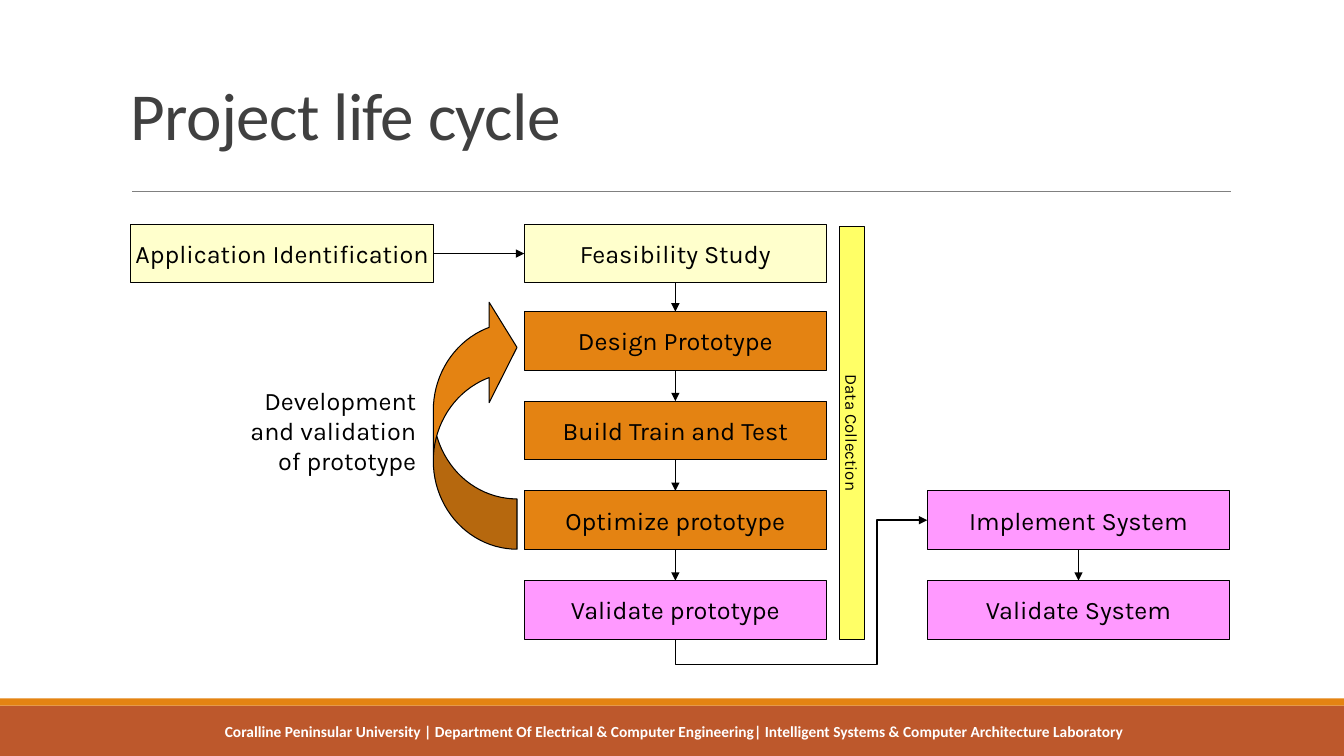
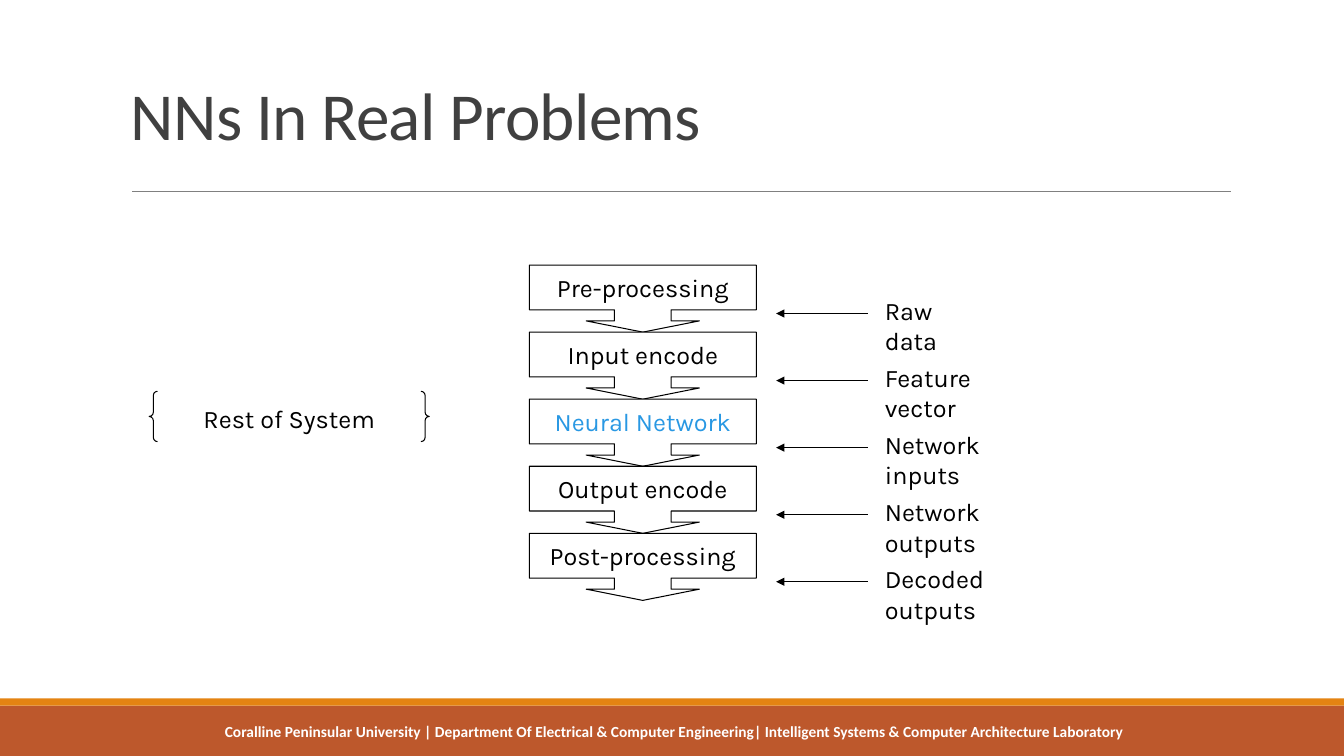
from dataclasses import dataclass

from lxml.etree import SubElement as Sub
from pptx import Presentation
from pptx.dml.color import RGBColor as Rgb
from pptx.enum.shapes import MSO_CONNECTOR as Link, MSO_SHAPE as Form
from pptx.enum.text import MSO_ANCHOR as Anchor, PP_ALIGN as Align
from pptx.oxml.ns import qn
from pptx.util import Cm, Pt

INK = {
    "black": "000000", "white": "FFFFFF", "title": "404040", "rule": "808080",
    "brick": "BD582C", "orange": "E48312", "cream": "FFFFCC",
    "yellow": "FFFF66", "pink": "FF99FF", "blue": "2998E3",
}
WIDE, HIGH = 33.87, 19.05
FOOTER = ("Coralline Peninsular University | Department Of Electrical & Computer "
          "Engineering| Intelligent Systems & Computer Architecture Laboratory")


@dataclass
class Box:
    x: float
    y: float
    w: float
    h: float


@dataclass
class Step:
    text: str
    x: float
    y: float
    fill: str


@dataclass
class Stage:
    text: str
    label: str
    color: str = "black"


# Shared drawing tools
def hue(name: str) -> Rgb:
    return Rgb.from_string(INK[name])


def put(shape, text: str, *, size: float = 18, font: str = "Karla",
        color: str = "black", bold: bool = False, align=Align.CENTER,
        anchor=Anchor.MIDDLE, pad: float = 0, lead: float = 1, track: int = 0):
    """Write text into a shape; a newline becomes a line break."""
    frame = shape.text_frame
    frame.word_wrap = True
    frame.vertical_anchor = anchor
    frame.margin_left = frame.margin_right = Cm(pad)
    frame.margin_top = frame.margin_bottom = Cm(pad / 2)
    para = frame.paragraphs[0]
    para.alignment, para.line_spacing = align, lead
    for i, line in enumerate(text.split("\n")):
        if i:
            para.add_line_break()
        run = para.add_run()
        run.text = line
        run.font.size, run.font.name, run.font.bold = Pt(size), font, bold
        run.font.color.rgb = hue(color)
        if track:
            run.font._element.set("spc", str(track))


def note(slide, box: Box, text: str, **style):
    area = slide.shapes.add_textbox(Cm(box.x), Cm(box.y), Cm(box.w), Cm(box.h))
    put(area, text, **{"pad": 0.25, "anchor": Anchor.TOP, **style})


def draw(slide, form, box: Box, fill: str = "", line: str = "black", adj=()):
    shape = slide.shapes.add_shape(form, Cm(box.x), Cm(box.y), Cm(box.w), Cm(box.h))
    shape.shadow.inherit = False
    if fill:
        shape.fill.solid()
        shape.fill.fore_color.rgb = hue(fill)
    else:
        shape.fill.background()
    if line:
        shape.line.color.rgb = hue(line)
        shape.line.width = Pt(0.75)
    else:
        shape.line.fill.background()
    for i, part in enumerate(adj):
        shape.adjustments[i] = part
    return shape


def wire(slide, start=(0, 0), end=(0, 0), *, color: str = "black",
         width: float = 0.75, head: bool = True, kind=Link.STRAIGHT):
    ends = [Cm(n) for n in (*start, *end)]
    link = slide.shapes.add_connector(kind, *ends)
    link.line.color.rgb = hue(color)
    link.line.width = Pt(width)
    props = link._element.spPr
    if head:
        Sub(props.find(qn("a:ln")), qn("a:tailEnd"), type="triangle")
    Sub(props, qn("a:effectLst"))
    return link


def join(slide, first, last, leave: int, enter: int, kind=Link.STRAIGHT):
    """Glue an arrow to sites: 0 top, 1 left, 2 bottom, 3 right."""
    link = wire(slide, width=1, kind=kind)
    link.begin_connect(first, leave)
    link.end_connect(last, enter)
    return link


def detour(slide, first, last):
    """Run from the bottom of one box, below it, up to the left of another."""
    link = join(slide, first, last, 2, 1, Link.ELBOW)
    left, low = first.left + first.width // 2, first.top + first.height
    right, top = last.left, last.top + last.height // 2
    wide, high = right - left, low - top
    link.left, link.top = (left + right - high) // 2, (top + low - wide) // 2
    link.width, link.height = high, wide
    props = link._element.spPr
    turn = props.find(qn("a:xfrm"))
    for key, value in (("rot", "5400000"), ("flipH", "1"), ("flipV", "1")):
        turn.set(key, value)
    geom = props.find(qn("a:prstGeom"))
    geom.set("prst", "bentConnector4")
    guides = geom.find(qn("a:avLst"))
    for name, value in (("adj1", -21300), ("adj2", 80000)):
        Sub(guides, qn("a:gd"), name=name, fmla=f"val {value}")


def start(deck, title: str):
    """Add a slide with bands, rule, title and footer."""
    slide = deck.slides.add_slide(deck.slide_layouts[6])
    draw(slide, Form.RECTANGLE, Box(0, 17.78, WIDE, 1.27), "brick", "")
    draw(slide, Form.RECTANGLE, Box(0, 17.6, WIDE, 0.18), "orange", "")
    wire(slide, (3.33, 4.82), (31.01, 4.82), color="rule", width=0.5, head=False)
    note(slide, Box(3.05, 1.57, 27.94, 2.44), title, size=48, font="Calibri",
         color="title", align=Align.LEFT, anchor=Anchor.BOTTOM, lead=0.85, track=-50)
    note(slide, Box(0.38, 18.08, 33.25, 0.97), FOOTER, size=11, font="Calibri",
         color="white", bold=True)
    return slide


# Slide 1: flow of boxes
def cycle(deck):
    slide = start(deck, "Project life cycle")
    left, mid, right = 3.3, 13.21, 23.37
    top, rows = 5.65, [7.85 + 2.26 * i for i in range(4)]
    steps = [
        Step("Application Identification", left, top, "cream"),
        Step("Feasibility Study", mid, top, "cream"),
        Step("Design Prototype", mid, rows[0], "orange"),
        Step("Build Train and Test", mid, rows[1], "orange"),
        Step("Optimize prototype", mid, rows[2], "orange"),
        Step("Validate prototype", mid, rows[3], "pink"),
        Step("Implement System", right, rows[2], "pink"),
        Step("Validate System", right, rows[3], "pink"),
    ]
    boxes = []
    for step in steps:
        box = draw(slide, Form.FLOWCHART_PROCESS, Box(step.x, step.y, 7.62, 1.48), step.fill)
        put(box, step.text)
        boxes.append(box)

    # Arrows between boxes
    join(slide, boxes[0], boxes[1], 3, 1)
    for i in (1, 2, 3, 4, 6):
        join(slide, boxes[i], boxes[i + 1], 2, 0)
    detour(slide, boxes[5], boxes[6])

    # Upright bar
    bar = draw(slide, Form.RECTANGLE, Box(16.28, 10.59, 10.39, 0.64), "yellow")
    bar.rotation = 90
    put(bar, "Data Collection", size=12)

    # Loop back to design
    loop = draw(slide, Form.CURVED_RIGHT_ARROW, Box(10.92, 7.49, 2.11, 6.35),
                "orange", adj=(0.6, 1.2, 0.333))
    loop._element.spPr.find(qn("a:xfrm")).set("flipV", "1")
    note(slide, Box(5.98, 9.58, 4.76, 2.54), "Development and validation of prototype",
         align=Align.RIGHT)


# Slide 2: stack of callouts with labels
def stack(deck):
    slide = start(deck, "NNs In Real Problems")
    stages = [
        Stage("Pre-processing", "Raw\ndata"),
        Stage("Input encode", "Feature\nvector"),
        Stage("Neural Network", "Network\ninputs", "blue"),
        Stage("Output encode", "Network\noutputs"),
        Stage("Post-processing", "Decoded\noutputs"),
    ]
    pitch = 1.69
    for i, stage in enumerate(stages):
        y = 6.68 + pitch * i
        box = draw(slide, Form.DOWN_ARROW_CALLOUT, Box(13.34, y, 5.72, pitch), "white",
                   adj=(0.844, 0.844, 0.167, 0.667))
        put(box, stage.text, color=stage.color)
        wire(slide, (21.87, y + 1.22), (19.56, y + 1.22))
        note(slide, Box(22.05, y + 0.64, 4, pitch), stage.label, align=Align.LEFT)
    rest = draw(slide, Form.DOUBLE_BRACE, Box(3.76, 9.86, 7.06, 1.27), adj=(0.083,))
    put(rest, "Rest of System")


def main():
    deck = Presentation()
    deck.slide_width, deck.slide_height = Cm(WIDE), Cm(HIGH)
    cycle(deck)
    stack(deck)
    deck.save("out.pptx")


if __name__ == "__main__":
    main()
